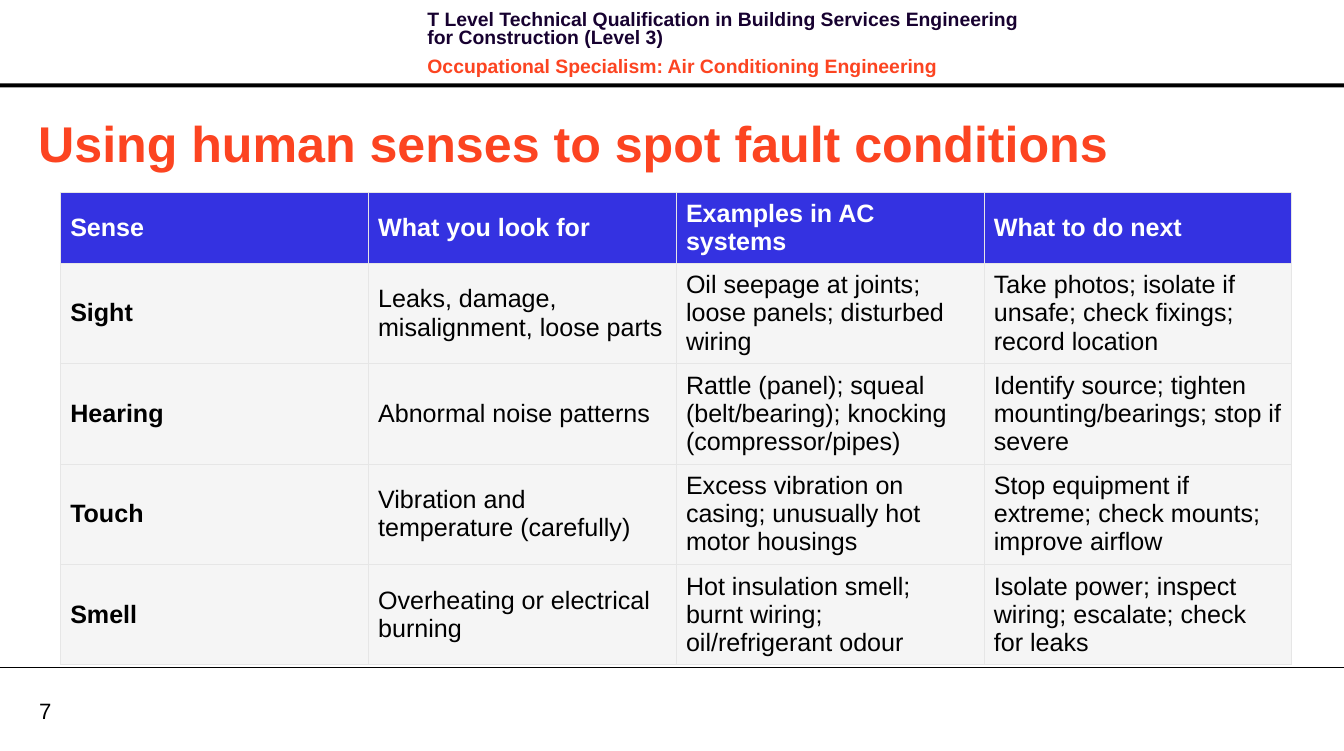
"""Build the slide on using human senses to spot fault conditions."""
from dataclasses import dataclass

from lxml import etree
from pptx import Presentation
from pptx import util as u
from pptx.dml.color import RGBColor
from pptx.enum import shapes, text
from pptx.oxml import ns

SLIDE_WIDTH, SLIDE_HEIGHT = u.Inches(13.39), u.Inches(7.48)
FONT = "Arial"
BLACK = RGBColor(0x00, 0x00, 0x00)
WHITE = RGBColor(0xFF, 0xFF, 0xFF)
NAVY = RGBColor(0x17, 0x01, 0x30)
ORANGE = RGBColor(0xFC, 0x44, 0x21)
BLUE = RGBColor(0x34, 0x32, 0xE1)
PALE_GREY = RGBColor(0xF5, 0xF5, 0xF5)
BORDER_GREY = RGBColor(0xE6, 0xE6, 0xE6)

HEADER_ROW, SENSE_ROW = 0.7, 1.0
SENSES = [
    ("Sense", "What you look for", "Examples in AC systems", "What to do next"),
    ("Sight", "Leaks, damage, misalignment, loose parts",
     "Oil seepage at joints; loose panels; disturbed wiring",
     "Take photos; isolate if unsafe; check fixings; record location"),
    ("Hearing", "Abnormal noise patterns",
     "Rattle (panel); squeal (belt/bearing); knocking (compressor/pipes)",
     "Identify source; tighten mounting/bearings; stop if severe"),
    ("Touch", "Vibration and temperature (carefully)",
     "Excess vibration on casing; unusually hot motor housings",
     "Stop equipment if extreme; check mounts; improve airflow"),
    ("Smell", "Overheating or electrical burning",
     "Hot insulation smell; burnt wiring; oil/refrigerant odour",
     "Isolate power; inspect wiring; escalate; check for leaks"),
]


@dataclass(frozen=True)
class Box:
    """A rectangle in percent of the slide's width and height."""
    left: float
    top: float
    width: float
    height: float

    def lengths(self) -> tuple[int, int, int, int]:
        """Return left, top, width and height as slide lengths."""
        return (round(SLIDE_WIDTH * self.left / 100), round(SLIDE_HEIGHT * self.top / 100),
                round(SLIDE_WIDTH * self.width / 100), round(SLIDE_HEIGHT * self.height / 100))


@dataclass(frozen=True)
class Style:
    """The look of a run of text."""
    size: float
    color: RGBColor
    bold: bool = False


@dataclass(frozen=True)
class Label:
    """A text box with one style for each paragraph."""
    box: Box
    lines: tuple[tuple[str, Style], ...]
    anchor: text.MSO_ANCHOR
    margins: tuple[float, float] = (0, 0)
    line_spacing: float | None = None
    gap: float = 0


HEADER_RULE = Box(0, 11.1, 100, 0.53)
FOOTER_RULE = Box(0, 88.9, 100, 0)
TITLE = Label(Box(2.09, 14.17, 92.61, 9.49),
              (("Using human senses to spot fault conditions", Style(36, ORANGE, True)),),
              text.MSO_ANCHOR.BOTTOM, (0.1, 0.05))
TABLE = Box(4.48, 25.67, 91.64, 62.83)
LABELS = [
    Label(Box(31.07, 0.94, 45.78, 8.56),
          (("T Level Technical Qualification in Building Services Engineering "
            "for Construction (Level 3)", Style(13.9, NAVY, True)),
           ("Occupational Specialism: Air Conditioning Engineering", Style(13.9, ORANGE, True))),
          text.MSO_ANCHOR.TOP, (0.1, 0.05), line_spacing=13, gap=8),
    Label(Box(2.91, 92.78, 4.78, 3.61), (("7", Style(15.9, BLACK)),), text.MSO_ANCHOR.MIDDLE),
]


def style_paragraph(paragraph, style: Style) -> None:
    """Format every run of a paragraph."""
    paragraph.alignment = text.PP_ALIGN.LEFT
    for run in paragraph.runs:
        run.font.name = FONT
        run.font.size = u.Pt(style.size)
        run.font.bold = style.bold
        run.font.color.rgb = style.color


def fill_label(shape, label: Label) -> None:
    """Put a label's text into a shape and place it."""
    shape.left, shape.top, shape.width, shape.height = label.box.lengths()
    frame = shape.text_frame
    frame.text = "\n".join(line for line, _ in label.lines)
    frame.word_wrap = True
    frame.auto_size = text.MSO_AUTO_SIZE.NONE
    frame.vertical_anchor = label.anchor
    frame.margin_left = frame.margin_right = u.Inches(label.margins[0])
    frame.margin_top = frame.margin_bottom = u.Inches(label.margins[1])
    for index, (paragraph, (_, style)) in enumerate(zip(frame.paragraphs, label.lines)):
        style_paragraph(paragraph, style)
        paragraph.space_before = u.Pt(label.gap if index else 0)
        if label.line_spacing:
            paragraph.line_spacing = u.Pt(label.line_spacing)


def add_rules(slide) -> None:
    """Draw the thick header rule and the thin footer rule."""
    band = slide.shapes.add_shape(shapes.MSO_SHAPE.RECTANGLE, *HEADER_RULE.lengths())
    band.shadow.inherit = False
    band.fill.solid()
    band.fill.fore_color.rgb = BLACK
    band.line.fill.background()
    left, top, width, _ = FOOTER_RULE.lengths()
    line = slide.shapes.add_connector(shapes.MSO_CONNECTOR.STRAIGHT, left, top, left + width, top)
    line.line.color.rgb = BLACK
    line.line.width = u.Pt(0.75)
    etree.SubElement(line._element.spPr, ns.qn("a:effectLst"))


def add_borders(cell) -> None:
    """Give a cell thin grey borders on all sides."""
    properties = cell._tc.get_or_add_tcPr()
    for index, side in enumerate(("lnL", "lnR", "lnT", "lnB")):
        border = etree.Element(ns.qn(f"a:{side}"), w=str(u.Pt(0.5)))
        fill = etree.SubElement(border, ns.qn("a:solidFill"))
        etree.SubElement(fill, ns.qn("a:srgbClr"), val=str(BORDER_GREY))
        properties.insert(index, border)


def add_senses_table(slide) -> None:
    """Draw the table of senses, signs, examples and actions."""
    table = slide.shapes.add_table(len(SENSES), len(SENSES[0]), *TABLE.lengths()).table
    for row, texts in enumerate(SENSES):
        table.rows[row].height = u.Inches(SENSE_ROW if row else HEADER_ROW)
        for column, words in enumerate(texts):
            cell = table.cell(row, column)
            cell.text_frame.text = words
            cell.vertical_anchor = text.MSO_ANCHOR.MIDDLE
            cell.fill.solid()
            cell.fill.fore_color.rgb = PALE_GREY if row else BLUE
            style = Style(18, BLACK if row else WHITE, row == 0 or column == 0)
            style_paragraph(cell.text_frame.paragraphs[0], style)
            add_borders(cell)


def main() -> None:
    """Build and save the presentation."""
    presentation = Presentation()
    presentation.slide_width, presentation.slide_height = SLIDE_WIDTH, SLIDE_HEIGHT
    slide = presentation.slides.add_slide(presentation.slide_layouts[5])
    add_rules(slide)
    for label in LABELS:
        fill_label(slide.shapes.add_textbox(*label.box.lengths()), label)
    fill_label(slide.shapes.title, TITLE)
    add_senses_table(slide)
    presentation.save("out.pptx")


if __name__ == "__main__":
    main()
